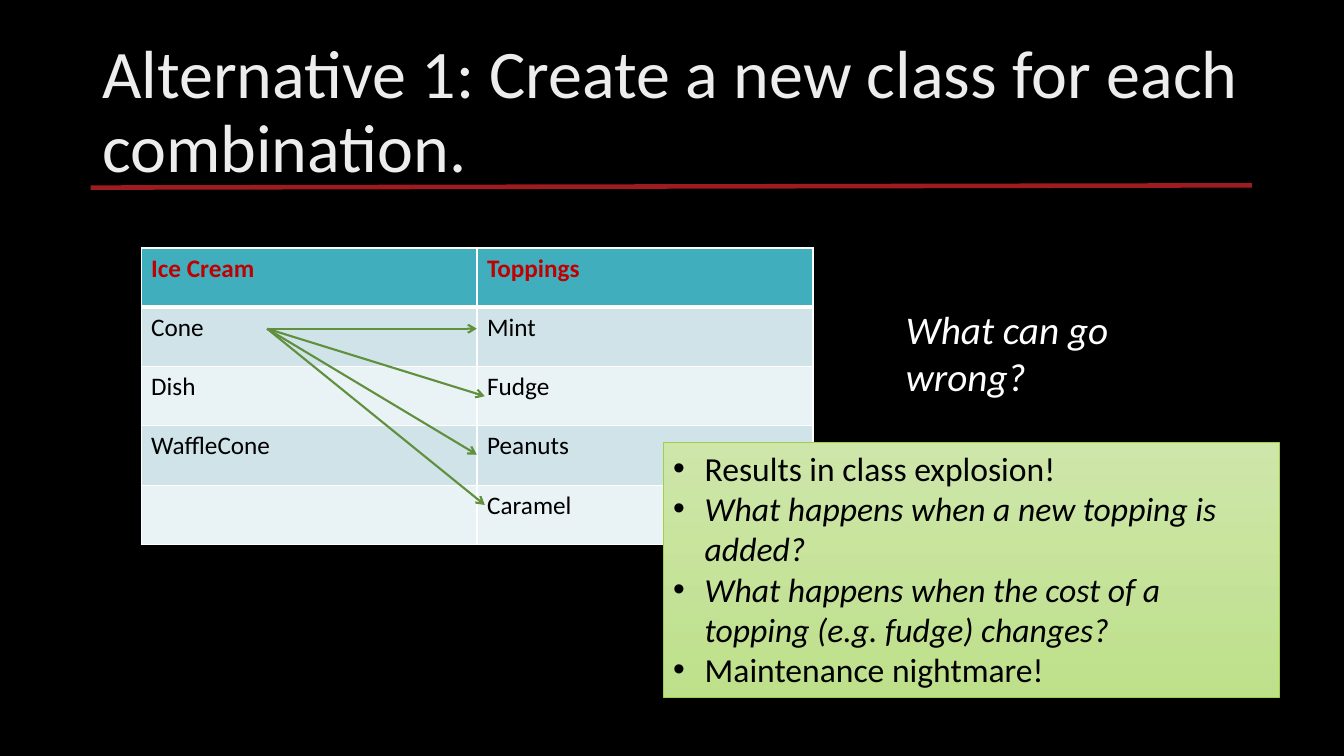
from lxml.etree import SubElement
from pptx import Presentation
from pptx.dml.color import RGBColor
from pptx.enum.shapes import MSO_CONNECTOR, MSO_SHAPE
from pptx.enum.text import MSO_ANCHOR, PP_ALIGN
from pptx.oxml.ns import qn
from pptx.util import Pt

ROWS = [
    ("Ice Cream", "Toppings"),
    ("Cone", "Mint"),
    ("Dish", "Fudge"),
    ("WaffleCone", "Peanuts"),
    ("", "Caramel"),
]
PROBLEMS = [
    ("Results in class explosion!", False),
    ("What happens when a new topping is added?", True),
    ("What happens when the cost of a topping (e.g. fudge) changes?", True),
    ("Maintenance nightmare!", False),
]
HEADER_FILL = "41AEBD"
BAND_FILLS = ["E9F2F4", "CFE3E8"]
ARROW_START = (190.8, 234.8)
ARROW_ENDS = [(340.6, 234.8), (346.3, 283), (340.6, 324.7), (346.3, 360.7)]


def color(value):
    return RGBColor.from_string(value)


def set_font(paragraph, size, value, bold=False, italic=False):
    font = paragraph.font
    font.name = "Calibri"
    font.size = Pt(size)
    font.bold = bold
    font.italic = italic
    font.color.rgb = color(value)


def add_text(slide, text, left, top, width, height, size, value, italic=False):
    frame = slide.shapes.add_textbox(Pt(left), Pt(top), Pt(width), Pt(height)).text_frame
    frame.word_wrap = True
    paragraph = frame.paragraphs[0]
    paragraph.text = text
    set_font(paragraph, size, value, italic=italic)
    return frame


def add_line(slide, start, end, value, width, arrow=False):
    points = [Pt(length) for length in (*start, *end)]
    line = slide.shapes.add_connector(MSO_CONNECTOR.STRAIGHT, *points)
    line.line.color.rgb = color(value)
    line.line.width = Pt(width)
    properties = line._element.spPr
    if arrow:
        SubElement(properties.find(qn("a:ln")), qn("a:tailEnd"), type="arrow")
    SubElement(properties, qn("a:effectLst"))


def add_border(cell, side, width):
    properties = cell._tc.get_or_add_tcPr()
    border = SubElement(properties, qn(f"a:ln{side}"), w=str(Pt(width)))
    fill = SubElement(border, qn("a:solidFill"))
    SubElement(fill, qn("a:srgbClr"), val="FFFFFF")


def style_cell(cell, row):
    is_header = row == 0
    widths = {"L": 1, "R": 1, "T": 3 if row == 1 else 1, "B": 3 if is_header else 1}
    for side, width in widths.items():
        add_border(cell, side, width)
    cell.fill.solid()
    cell.fill.fore_color.rgb = color(HEADER_FILL if is_header else BAND_FILLS[row % 2])
    set_font(cell.text_frame.paragraphs[0], 18, "C00000" if is_header else "000000", bold=is_header)


def add_options_table(slide):
    table = slide.shapes.add_table(
        len(ROWS), len(ROWS[0]), Pt(100.8), Pt(177.1), Pt(480), Pt(211.8)
    ).table
    for row, texts in enumerate(ROWS):
        for column, text in enumerate(texts):
            cell = table.cell(row, column)
            cell.text = text
            style_cell(cell, row)


def add_bullet(paragraph):
    properties = paragraph._p.get_or_add_pPr()
    properties.set("marL", str(Pt(22.5)))
    properties.set("indent", str(-Pt(22.5)))
    SubElement(properties, qn("a:buFont"), typeface="Arial")
    SubElement(properties, qn("a:buChar"), char="•")


def add_problem_box(slide):
    box = slide.shapes.add_shape(MSO_SHAPE.RECTANGLE, Pt(473.8), Pt(316.1), Pt(440), Pt(181.8))
    box.shadow.inherit = False
    box.fill.gradient()
    box.fill.gradient_angle = 270
    for stop, value in zip(box.fill.gradient_stops, ["CEE6AA", "BEE08A"]):
        stop.color.rgb = color(value)
    box.line.color.rgb = color("A2CF49")
    box.line.width = Pt(0.5)
    frame = box.text_frame
    frame.word_wrap = True
    frame.vertical_anchor = MSO_ANCHOR.TOP
    for index, (text, italic) in enumerate(PROBLEMS):
        paragraph = frame.add_paragraph() if index else frame.paragraphs[0]
        paragraph.text = text
        paragraph.alignment = PP_ALIGN.LEFT
        add_bullet(paragraph)
        set_font(paragraph, 24, "000000", italic=italic)


def main():
    presentation = Presentation()
    presentation.slide_width = Pt(960)
    presentation.slide_height = Pt(540)
    slide = presentation.slides.add_slide(presentation.slide_layouts[6])
    slide.background.fill.solid()
    slide.background.fill.fore_color.rgb = color("000000")

    add_line(slide, (64.8, 134), (894.2, 132.4), "9E1B20", 3.25)
    title = add_text(slide, "Alternative 1: Create a new class for each combination.",
                     66, 28.8, 828, 104.4, 48.6, "EDEDED")
    title.vertical_anchor = MSO_ANCHOR.MIDDLE
    title.paragraphs[0].line_spacing = 0.9
    add_options_table(slide)
    for end in ARROW_ENDS:
        add_line(slide, ARROW_START, end, "608F3D", 1.5, arrow=True)
    add_text(slide, "What can go wrong?", 640, 214.6, 240, 41, 28, "FFFFFF", italic=True)
    add_problem_box(slide)
    presentation.save("out.pptx")


if __name__ == "__main__":
    main()
